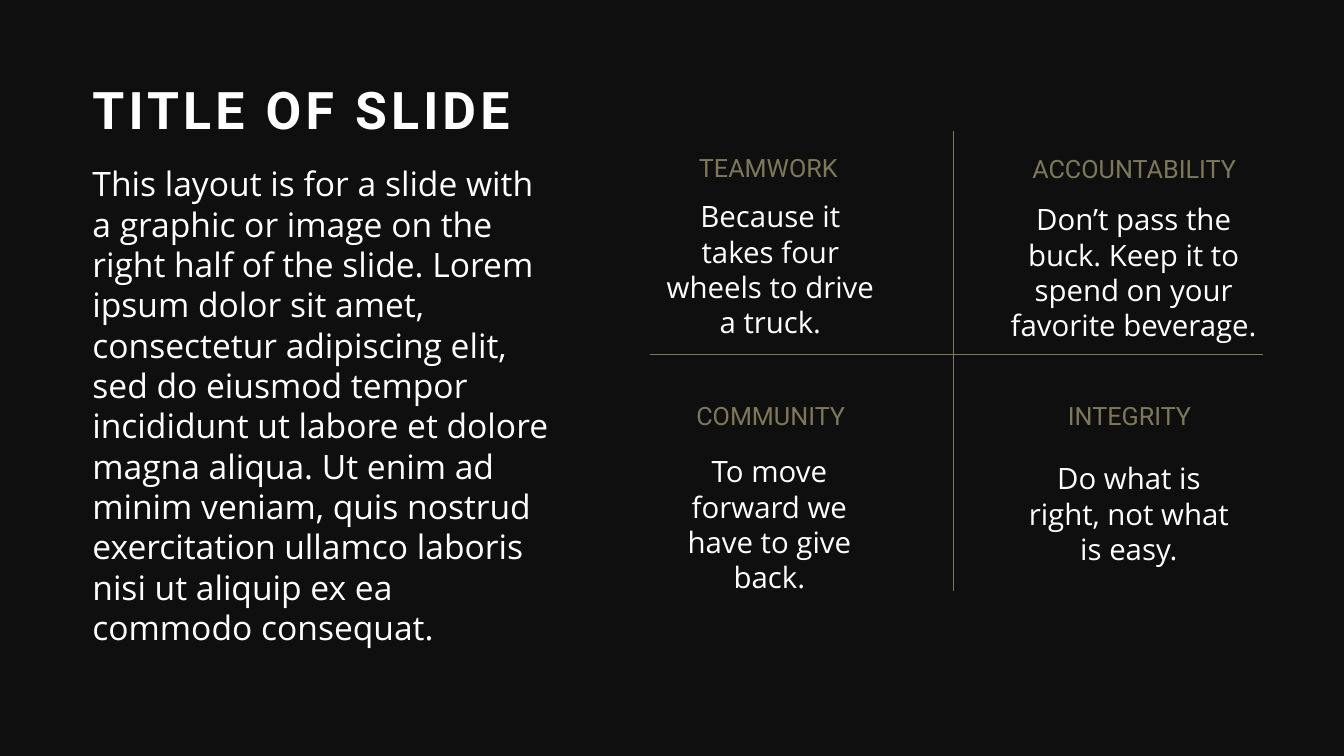
from dataclasses import dataclass

from lxml import etree
from pptx import Presentation
from pptx.dml.color import RGBColor
from pptx.enum import shapes, text
from pptx.oxml import ns
from pptx.util import Cm, Pt

COLORS = {"background": "0F0F0F", "text": "FFFFFF", "accent": "7E785A"}


@dataclass
class Style:
    font: str
    size: float
    color: str = "text"
    bold: bool = False
    tracking: float = 0
    line_spacing: float = 1.0
    align: text.PP_ALIGN = text.PP_ALIGN.CENTER
    anchor: text.MSO_ANCHOR = text.MSO_ANCHOR.TOP


@dataclass
class Box:
    left: float
    top: float
    width: float
    height: float
    content: str
    style: Style


@dataclass
class Rule:
    x1: float
    y1: float
    x2: float
    y2: float


TITLE = Style("Roboto", 37, bold=True, tracking=3, line_spacing=0.7,
              align=text.PP_ALIGN.LEFT, anchor=text.MSO_ANCHOR.BOTTOM)
BODY = Style("Open Sans", 24, align=text.PP_ALIGN.LEFT)
HEADING = Style("Roboto", 18, color="accent")
VALUE = Style("Open Sans", 21)

# Positions and sizes in centimetres
BOXES = [
    Box(2.08, 2.18, 12.4, 1.42, "TITLE OF SLIDE", TITLE),
    Box(2.08, 3.99, 12.14, 12.34,
        "This layout is for a slide with a graphic or image on the right half "
        "of the slide. Lorem ipsum dolor sit amet, consectetur adipiscing "
        "elit, sed do eiusmod tempor incididunt ut labore et dolore magna "
        "aliqua. Ut enim ad minim veniam, quis nostrud exercitation ullamco "
        "laboris nisi ut aliquip ex ea commodo consequat.", BODY),
    Box(16.48, 3.71, 5.77, 1.02, "TEAMWORK", HEADING),
    Box(25.7, 3.73, 5.77, 1.02, "ACCOUNTABILITY", HEADING),
    Box(16.54, 9.96, 5.77, 1.02, "COMMUNITY", HEADING),
    Box(25.58, 9.96, 5.77, 1.02, "INTEGRITY", HEADING),
    Box(16.43, 4.88, 5.97, 2.95,
        "Because it takes four wheels to drive a truck.", VALUE),
    Box(24.94, 4.95, 7.26, 3.84,
        "Don’t pass the buck. Keep it to spend on your favorite beverage.",
        VALUE),
    Box(16.38, 11.3, 6.02, 2.95,
        "To move forward we have to give back.", VALUE),
    Box(25.58, 11.48, 5.74, 2.95,
        "Do what is right, not what is easy.", VALUE),
]
RULES = [Rule(24.03, 3.3, 24.03, 14.88), Rule(16.38, 8.94, 31.83, 8.94)]


def rgb(name: str) -> RGBColor:
    return RGBColor.from_string(COLORS[name])


def add_text(s, box: Box) -> None:
    style = box.style
    sp = s.shapes.add_textbox(Cm(box.left), Cm(box.top),
                              Cm(box.width), Cm(box.height))
    tf = sp.text_frame
    tf.word_wrap = True
    tf.vertical_anchor = style.anchor
    p = tf.paragraphs[0]
    p.alignment = style.align
    p.line_spacing = style.line_spacing
    r = p.add_run()
    r.text = box.content
    r.font.name = style.font
    r.font.size = Pt(style.size)
    r.font.bold = style.bold
    r.font.color.rgb = rgb(style.color)
    if style.tracking:
        r.font._element.set("spc", str(round(style.tracking * 100)))


def add_rule(s, rule: Rule) -> None:
    line = s.shapes.add_connector(shapes.MSO_CONNECTOR.STRAIGHT,
                                  Cm(rule.x1), Cm(rule.y1),
                                  Cm(rule.x2), Cm(rule.y2))
    line.line.color.rgb = rgb("accent")
    line.line.width = Pt(0.5)
    etree.SubElement(line._element.spPr, ns.qn("a:effectLst"))


def main() -> None:
    prs = Presentation()
    prs.slide_width, prs.slide_height = Cm(33.87), Cm(19.05)
    s = prs.slides.add_slide(prs.slide_layouts[6])

    # Background
    s.background.fill.solid()
    s.background.fill.fore_color.rgb = rgb("background")

    # Title, body and the four values
    for box in BOXES:
        add_text(s, box)

    # Cross between the values
    for rule in RULES:
        add_rule(s, rule)

    prs.save("out.pptx")


if __name__ == "__main__":
    main()
